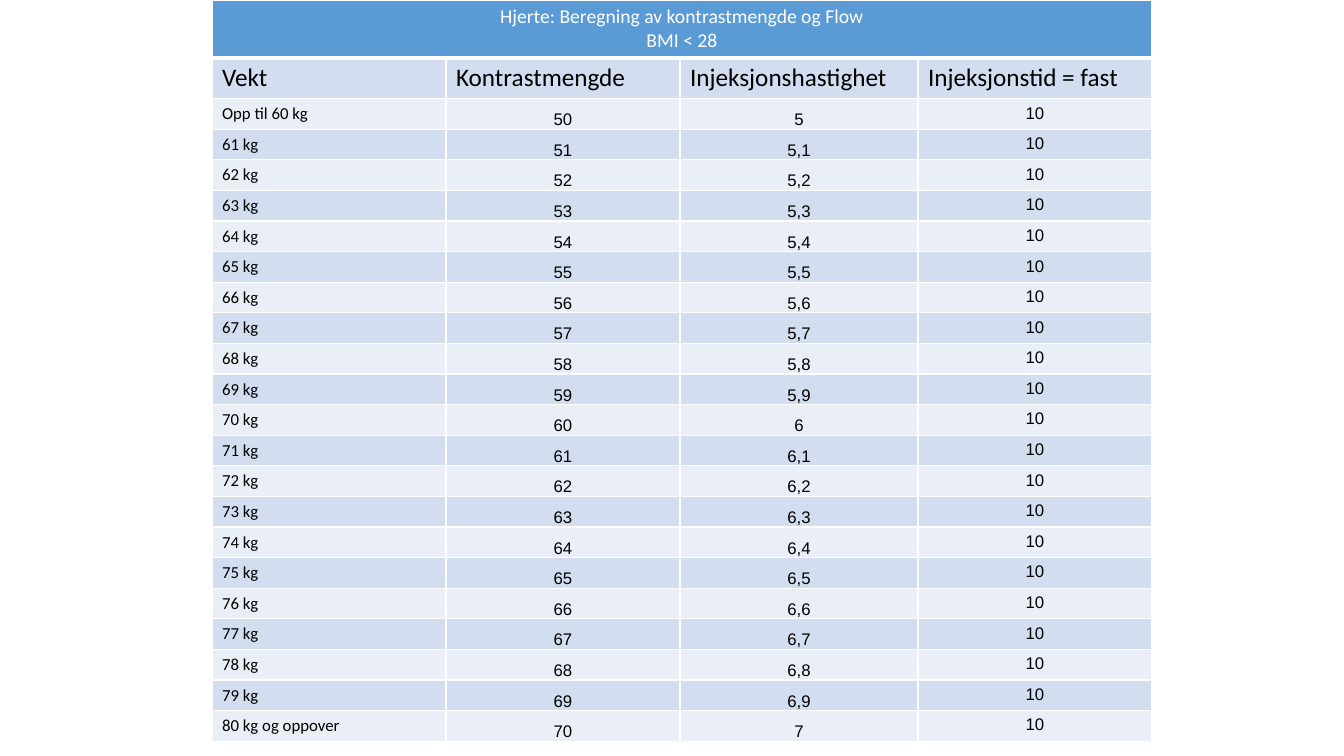
from dataclasses import dataclass

from lxml import etree
from pptx import Presentation
from pptx import util as u
from pptx.dml.color import RGBColor
from pptx.enum import text
from pptx.oxml import ns

PX = 12192000 / 1344
WHITE, BLACK, BLUE = "FFFFFF", "000000", "5B9BD5"
BANDS = ("EAEFF7", "D2DEEF")
WIDTHS = (234, 234, 238, 234)
STEPS = 21
HEIGHTS = (52, 37) + (29,) * STEPS


@dataclass(frozen=True)
class Style:
    size: int
    font: str = "Calibri"
    ink: str = BLACK
    mid: bool = False
    low: bool = False


TITLE = Style(14, ink=WHITE, mid=True)
HEAD = Style(18)
WEIGHT = Style(12)
DOSE = Style(12, "Arial", mid=True, low=True)
TIME = Style(12, "Arial", mid=True)


def emu(px: int) -> u.Emu:
    return u.Emu(round(px * PX))


def rgb(code: str) -> RGBColor:
    return RGBColor.from_string(code)


def add_edge(cell, side: str, points: int) -> None:
    line = etree.SubElement(cell._tc.get_or_add_tcPr(), ns.qn(f"a:ln{side}"), w=str(u.Pt(points)))
    fill = etree.SubElement(line, ns.qn("a:solidFill"))
    etree.SubElement(fill, ns.qn("a:srgbClr"), val=WHITE)


def paint(cell, fill: str, base: int = 1) -> None:
    """Give a cell its white edges, then its fill."""
    for side in "LRT":
        add_edge(cell, side, 1)
    add_edge(cell, "B", base)
    cell.fill.solid()
    cell.fill.fore_color.rgb = rgb(fill)


def write(cell, words: str, style: Style) -> None:
    frame = cell.text_frame
    for i, line in enumerate(words.split("\n")):
        par = frame.add_paragraph() if i else frame.paragraphs[0]
        if style.mid:
            par.alignment = text.PP_ALIGN.CENTER
        run = par.add_run()
        run.text = line
        run.font.size = u.Pt(style.size)
        run.font.name = style.font
        run.font.color.rgb = rgb(style.ink)
    if style.low:
        cell.vertical_anchor = text.MSO_ANCHOR.BOTTOM
        cell.margin_left = cell.margin_right = cell.margin_top = emu(1)
        cell.margin_bottom = 0


def dose_row(step: int) -> tuple[str, ...]:
    """Weight, contrast volume, flow and time for one step."""
    names = {0: "Opp til 60 kg", STEPS - 1: "80 kg og oppover"}
    dose = 50 + step
    flow = f"{dose / 10:g}".replace(".", ",")
    return names.get(step, f"{60 + step} kg"), str(dose), flow, "10"


def main() -> None:
    deck = Presentation()
    deck.slide_width, deck.slide_height = emu(1344), emu(756)
    slide = deck.slides.add_slide(deck.slide_layouts[6])
    table = slide.shapes.add_table(
        len(HEIGHTS), len(WIDTHS), emu(212), 0, emu(sum(WIDTHS)), emu(sum(HEIGHTS))
    ).table
    for col, width in zip(table.columns, WIDTHS):
        col.width = emu(width)
    for row, height in zip(table.rows, HEIGHTS):
        row.height = emu(height)

    for col in range(len(WIDTHS)):
        paint(table.cell(0, col), BLUE, 3)
    title = table.cell(0, 0)
    title.merge(table.cell(0, len(WIDTHS) - 1))
    write(title, "Hjerte: Beregning av kontrastmengde og Flow\nBMI < 28", TITLE)

    heads = ("Vekt", "Kontrastmengde", "Injeksjonshastighet", "Injeksjonstid = fast")
    body = [(heads, (HEAD,) * 4)]
    body += [(dose_row(step), (WEIGHT, DOSE, DOSE, TIME)) for step in range(STEPS)]
    for row, (words, styles) in enumerate(body, 1):
        for col, (word, style) in enumerate(zip(words, styles)):
            cell = table.cell(row, col)
            paint(cell, BANDS[row % 2])
            write(cell, word, style)
    deck.save("out.pptx")


if __name__ == "__main__":
    main()
